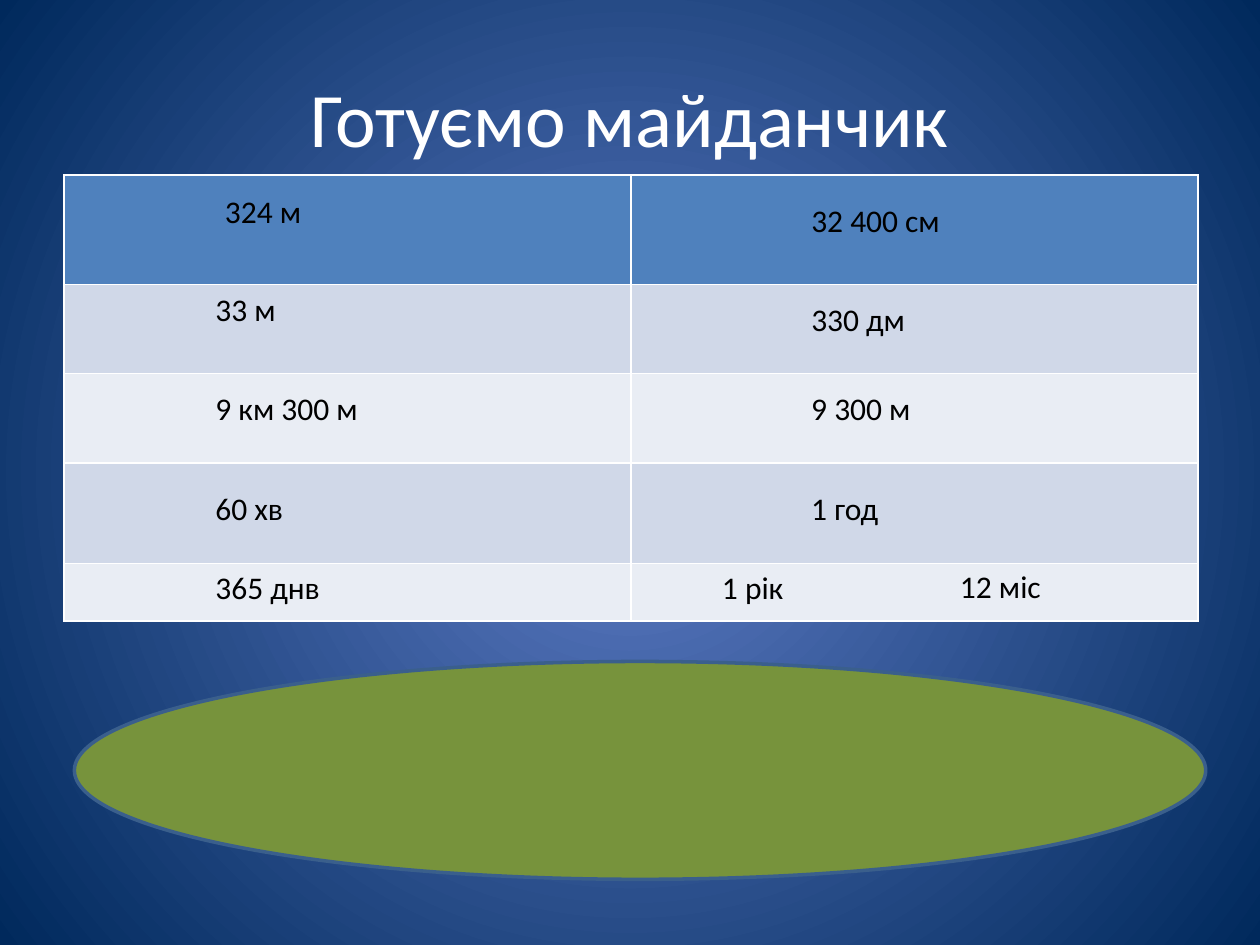
"""Build a slide that pairs equal measures in a table above a green field."""
from typing import NamedTuple

from lxml import etree
from pptx import Presentation
from pptx.dml.color import RGBColor
from pptx.enum import shapes, text
from pptx.oxml import ns
from pptx.util import Pt

FONT = "Calibri"
LEFT, RIGHT = 116, 456.5
ROWS = [62.5, 51, 51, 57.5, 33]
FILLS = ["4F81BD", "D0D8E8", "E9EDF4", "D0D8E8", "E9EDF4"]


class Label(NamedTuple):
    words: str
    x: float
    y: float
    w: float
    h: float = 29


LABELS = [
    Label("324 м", 121.5, 106, 102),
    Label("32 400 см", RIGHT, 111.5, 170),
    Label("33 м", LEFT, 162, 73.5, 51),
    Label("330 дм", RIGHT, 168, 73.5),
    Label("9 км 300 м", LEFT, 219, 176),
    Label("9 300 м", RIGHT, 219, 130),
    Label("60 хв", LEFT, 276, 108),
    Label("1 год", RIGHT, 276, 102),
    Label("365 днв", LEFT, 321, 193),
    Label("1 рік", 405.5, 321, 96.5),
    Label("12 міс", 541.5, 320.5, 124.5),
]


def tint(code: str) -> RGBColor:
    return RGBColor.from_string(code)


def place(shape, x: float, y: float, w: float, h: float) -> None:
    shape.left, shape.top, shape.width, shape.height = map(Pt, (x, y, w, h))


def style(frame, size: float, color: str) -> None:
    for run in frame.paragraphs[0].runs:
        run.font.name = FONT
        run.font.size = Pt(size)
        run.font.color.rgb = tint(color)


def draw_back(slide) -> None:
    fill = slide.background.fill
    fill.gradient()
    for stop, code, spot in zip(fill.gradient_stops, ("5E7CC5", "00295C"), (0, 1)):
        stop.color.rgb = tint(code)
        stop.position = spot
    line = next(slide.background._cSld.iter(ns.qn("a:lin")))
    glow = etree.Element(ns.qn("a:path"), {"path": "circle"})
    sides = {side: "50000" for side in "ltrb"}
    etree.SubElement(glow, ns.qn("a:fillToRect"), sides)
    line.getparent().replace(line, glow)


def draw_title(slide, words: str) -> None:
    title = slide.shapes.title
    place(title, 36, 21.5, 648, 90)
    frame = title.text_frame
    frame.text = words
    frame.vertical_anchor = text.MSO_ANCHOR.MIDDLE
    frame.paragraphs[0].alignment = text.PP_ALIGN.CENTER
    style(frame, 44, "FFFFFF")


def draw_table(slide) -> None:
    box = map(Pt, (36.7, 100, 648, sum(ROWS)))
    table = slide.shapes.add_table(len(ROWS), 2, *box).table
    for row, height, code in zip(table.rows, ROWS, FILLS):
        row.height = Pt(height)
        for cell in row.cells:
            cell.fill.solid()
            cell.fill.fore_color.rgb = tint(code)


def draw_label(slide, label: Label) -> None:
    box = map(Pt, (label.x, label.y, label.w, label.h))
    frame = slide.shapes.add_textbox(*box).text_frame
    frame.word_wrap = True
    frame.text = label.words
    style(frame, 18, "000000")


def draw_field(slide) -> None:
    box = map(Pt, (42.5, 378, 646.5, 124.5))
    field = slide.shapes.add_shape(shapes.MSO_SHAPE.OVAL, *box)
    field.shadow.inherit = False
    field.fill.solid()
    field.fill.fore_color.rgb = tint("77933C")
    field.line.color.rgb = tint("3A5F8C")
    field.line.width = Pt(2)


def main() -> None:
    deck = Presentation()
    deck.slide_width, deck.slide_height = Pt(720), Pt(540)
    slide = deck.slides.add_slide(deck.slide_layouts[5])
    draw_back(slide)
    draw_title(slide, "Готуємо майданчик")
    draw_table(slide)
    for label in LABELS:
        draw_label(slide, label)
    draw_field(slide)
    deck.save("out.pptx")


if __name__ == "__main__":
    main()
